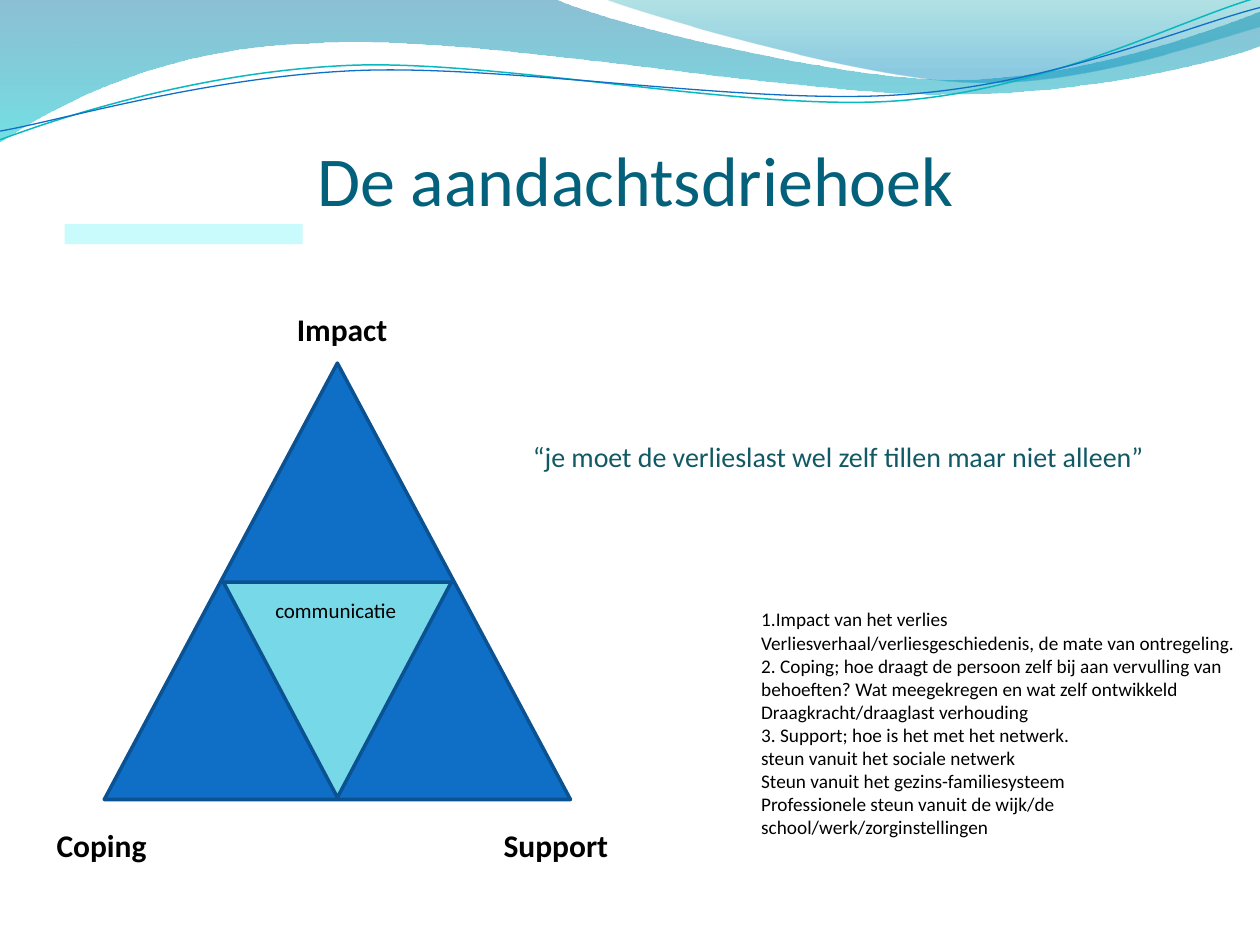
from lxml import etree
from pptx import Presentation
from pptx.dml.color import RGBColor
from pptx.enum.shapes import MSO_SHAPE
from pptx.enum.text import MSO_ANCHOR, MSO_AUTO_SIZE, PP_ALIGN
from pptx.oxml.ns import qn
from pptx.util import Pt

RECTANGLE = MSO_SHAPE.RECTANGLE
TRIANGLE = MSO_SHAPE.ISOSCELES_TRIANGLE
MIDDLE = MSO_ANCHOR.MIDDLE
TOP = MSO_ANCHOR.TOP
GROW = MSO_AUTO_SIZE.SHAPE_TO_FIT_TEXT
FIXED = MSO_AUTO_SIZE.NONE
LEFT = PP_ALIGN.LEFT
CENTER = PP_ALIGN.CENTER

BROAD_WAVE = [
    (0, 0), (316.8, -0.7),
    (342.7, 12.2, 478.1, 45.4, 545.8, 45.4),
    (614.2, 45.4, 689.8, 18.7, 720, 6.5), (720.7, 25.9),
    (707.8, 31.7, 626.4, 54.7, 537.1, 54),
    (447.8, 54, 275, 20.2, 185, 24.5),
    (92.9, 25.9, 33.1, 59.8, -0.7, 81.4),
]
RIGHT_WAVE = [
    (344.9, -0.7),
    (366.5, 7.9, 491, 44.6, 553.7, 46.8),
    (616.3, 49.7, 691.9, 23, 720, 15.1), (720, 0),
]
TEAL_LINE = [
    (0, 79.9),
    (34.6, 67, 113.8, 41, 199.4, 37.4),
    (284.4, 33.8, 427, 64.1, 513.4, 57.6),
    (599.8, 51.1, 675.4, 10.8, 718.6, -1.4),
]
BLUE_LINE = [
    (0, 74.9),
    (33.8, 69.1, 118.1, 43.9, 203.8, 40.3),
    (290.2, 36.7, 429.8, 60.5, 516.2, 54),
    (601.9, 48.2, 677.5, 15.1, 720, 4.3),
]
EXPLANATION = [
    "1.Impact van het verlies",
    "Verliesverhaal/verliesgeschiedenis, de mate van ontregeling.",
    "2. Coping; hoe draagt de persoon zelf bij aan vervulling van behoeften? "
    "Wat meegekregen en wat zelf ontwikkeld",
    "Draagkracht/draaglast verhouding",
    "3. Support; hoe is het met het netwerk.",
    "steun vanuit het sociale netwerk",
    "Steun vanuit het gezins-familiesysteem",
    "Professionele steun vanuit de wijk/de school/werk/zorginstellingen",
]


def color(value):
    return RGBColor.from_string(value)


def bend(shape, outline):
    lines = iter(list(shape.element.iter(qn("a:lnTo"))))
    for segment in outline[1:]:
        curve = next(lines)
        if len(segment) == 6:
            curve.tag = qn("a:cubicBezTo")
            for line in (next(lines), next(lines)):
                curve.append(line[0])
                line.getparent().remove(line)


def add_outline(slide, box, outline, close):
    left, top = box[:2]
    points = [
        (Pt(left + segment[index]), Pt(top + segment[index + 1]))
        for segment in outline for index in range(0, len(segment), 2)
    ]
    builder = slide.shapes.build_freeform(*points[0])
    builder.add_line_segments(points[1:], close=close)
    shape = builder.convert_to_shape()
    shape.shadow.inherit = False
    bend(shape, outline)
    return shape


def add_wave(slide, box, outline, stops):
    shape = add_outline(slide, box, outline, True)
    shape.line.fill.background()
    shape.fill.gradient()
    shape.fill.gradient_angle = 270
    for gradient_stop, (position, value, _) in zip(shape.fill.gradient_stops, stops):
        gradient_stop.position = position
        gradient_stop.color.rgb = color(value)
    gradient = shape.element.spPr.find(qn("a:gradFill"))
    for element, (_, _, opacity) in zip(gradient.iter(qn("a:srgbClr")), stops):
        etree.SubElement(element, qn("a:alpha")).set("val", str(opacity * 1000))


def add_header(slide, box):
    add_wave(slide, box, BROAD_WAVE, [(0, "0074A1", 45), (1, "00C6CF", 55)])
    add_wave(slide, box, RIGHT_WAVE, [(0, "00A1A9", 30), (0.8, "008BBF", 45)])
    for outline, value, width in ((TEAL_LINE, "0AB8BF", 0.85), (BLUE_LINE, "0F6FC6", 0.75)):
        shape = add_outline(slide, box, outline, False)
        shape.fill.background()
        shape.line.color.rgb = color(value)
        shape.line.width = Pt(width)


def add_panel(slide, kind, box, fill, line=None):
    shape = slide.shapes.add_shape(kind, *map(Pt, box))
    shape.shadow.inherit = False
    shape.fill.solid()
    shape.fill.fore_color.rgb = color(fill)
    if line:
        shape.line.color.rgb = color(line)
        shape.line.width = Pt(2)
    else:
        shape.line.fill.background()
    return shape


def add_text(slide, box, lines, size, value="000000", bold=False, align=LEFT,
             anchor=TOP, insets=(7.2, 3.6, 7.2, 3.6), sizing=GROW):
    frame = slide.shapes.add_textbox(*map(Pt, box)).text_frame
    frame.word_wrap = True
    frame.auto_size = sizing
    frame.vertical_anchor = anchor
    frame.margin_left, frame.margin_top, frame.margin_right, frame.margin_bottom = map(Pt, insets)
    frame.text = "\n".join(lines)
    for paragraph in frame.paragraphs:
        paragraph.alignment = align
        paragraph.font.name = "Calibri"
        paragraph.font.size = Pt(size)
        paragraph.font.bold = bold
        paragraph.font.color.rgb = color(value)


def add_title(slide, box):
    left, top = box[:2]
    add_panel(slide, RECTANGLE, (left + 0.7, top + 72.7, 136.1, 11.5), "C9FAFC")
    add_text(slide, box, ["De aandachtsdriehoek"], 40, "04617B",
             align=CENTER, anchor=MIDDLE, insets=(0, 3.6, 0, 0), sizing=FIXED)


def add_attention_triangle(slide, box):
    left, top, width, height = box
    middle = left + width / 2
    add_panel(slide, TRIANGLE, box, "0F6FC6", "0B5292")
    inner_width = 130.3
    inner_box = (middle - inner_width / 2, top + height / 2 + 0.4, inner_width, 123.1)
    add_panel(slide, TRIANGLE, inner_box, "77D9E8", "0B5292").rotation = 180
    label_top = top + height + 11.8
    for text, label_left, label_y, label_width, align in (
        ("Impact", middle - 59.6, top - 33.9, 124.6, CENTER),
        ("Coping", left - 34.4, label_top, 73.4, LEFT),
        ("Support", left + width - 45.3, label_top, 85, LEFT),
    ):
        add_text(slide, (label_left, label_y, label_width, 28.8), [text], 18,
                 bold=True, align=align)
    add_text(slide, (middle - 42.6, top + 130.2, 85, 21.6), ["communicatie"], 12)


def main():
    presentation = Presentation()
    presentation.slide_width = Pt(720)
    presentation.slide_height = Pt(540)
    slide = presentation.slides.add_slide(presentation.slide_layouts[6])
    add_header(slide, (0, 0, 720, 81.4))
    add_title(slide, (36.2, 55.4, 653.8, 90))
    add_attention_triangle(slide, (59.6, 207.5, 266.4, 249.4))
    add_text(slide, (297.5, 247.4, 391, 26.6),
             ["“je moet de verlieslast wel zelf tillen maar niet alleen”"], 16, "115964")
    add_text(slide, (427.9, 343.7, 292.3, 140.4), EXPLANATION, 11)
    presentation.save("out.pptx")


if __name__ == "__main__":
    main()
